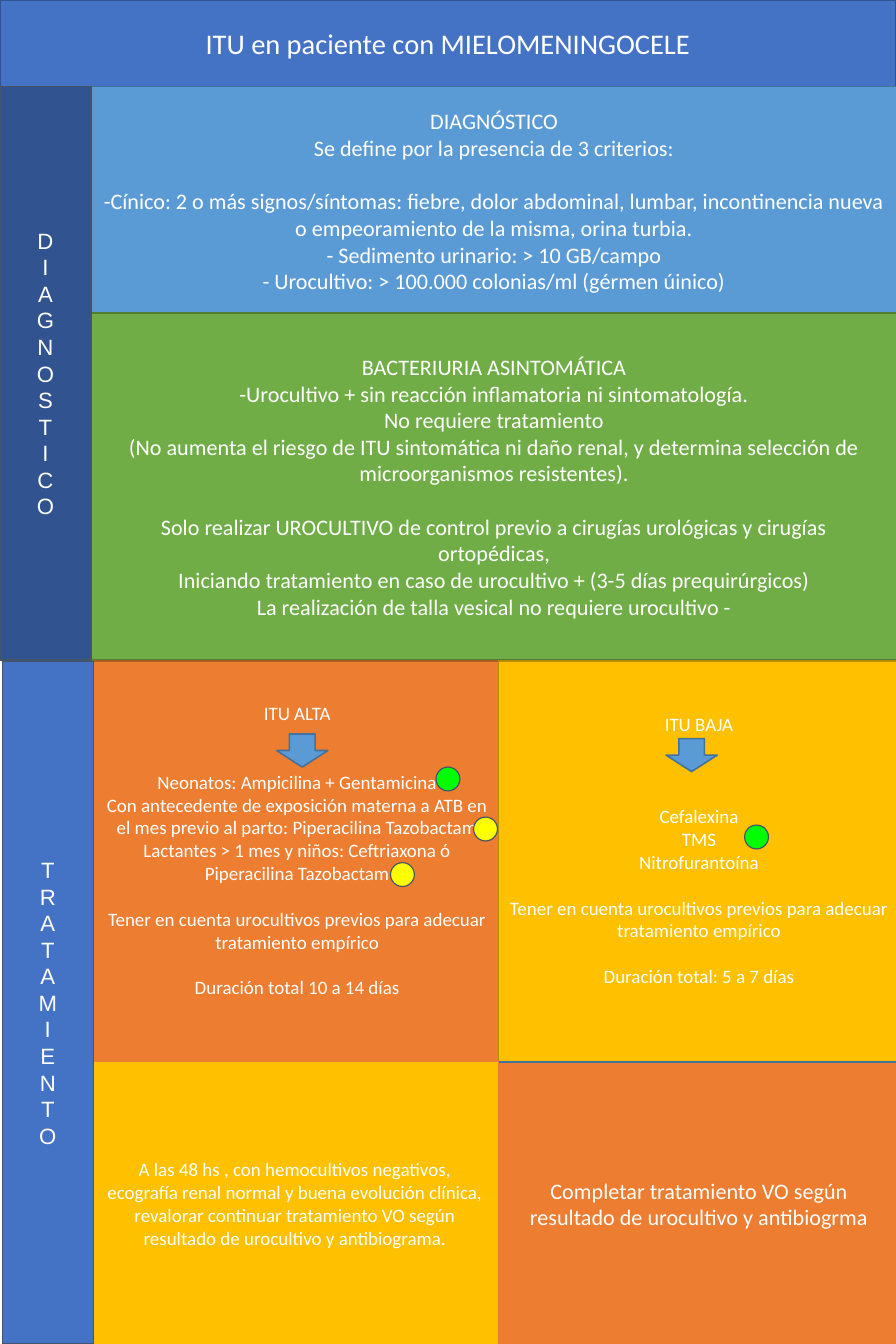
from pptx import Presentation
from pptx.dml.color import RGBColor
from pptx.enum.shapes import MSO_SHAPE as Preset
from pptx.enum.text import MSO_ANCHOR as Anchor, MSO_AUTO_SIZE as AutoSize, PP_ALIGN as Align
from pptx.oxml.ns import qn
from pptx.util import Inches, Pt
from lxml.etree import SubElement

LINE_HEIGHT = 1.22
SIDE = 0.8
MIDDLE = 4.38
DIAGNOSIS_TOP = 0.76
BACTERIURIA_TOP = 2.75
TREATMENT_TOP = 5.81
FOLLOW_UP_TOP = 9.33

BLUE, SKY, NAVY = "4472C4", "5B9BD5", "31538F"
GREEN, ORANGE, GOLD = "70AD47", "ED7D31", "FFC000"
SKY_EDGE, SLATE, WHITE = "42719B", "44546A", "FFFFFF"
LIME, YELLOW = "00FF00", "FFFF00"

DIAGNOSIS = [
    ["DIAGNÓSTICO", "Se define por la presencia de 3 criterios:"],
    ["-Cínico: 2 o más signos/síntomas: fiebre, dolor abdominal, lumbar, incontinencia nueva "
     "o empeoramiento de la misma, orina turbia.",
     "- Sedimento urinario: > 10 GB/campo",
     "- Urocultivo: > 100.000 colonias/ml (gérmen úinico)"],
]
BACTERIURIA = [
    ["BACTERIURIA ASINTOMÁTICA",
     "-Urocultivo + sin reacción inflamatoria ni sintomatología.",
     "No requiere tratamiento",
     "(No aumenta el riesgo de ITU sintomática ni daño renal, y determina selección de "
     "microorganismos resistentes)."],
    ["Solo realizar UROCULTIVO de control previo a cirugías urológicas y cirugías ortopédicas,",
     "Iniciando tratamiento en caso de urocultivo + (3-5 días prequirúrgicos)",
     "La realización de talla vesical no requiere urocultivo -"],
]
PRIOR_CULTURES = "Tener en cuenta urocultivos previos para adecuar tratamiento empírico"
UPPER_UTI = [
    ["ITU ALTA"],
    ["Neonatos: Ampicilina + Gentamicina",
     "Con antecedente de exposición materna a ATB en el mes previo al parto: "
     "Piperacilina Tazobactam",
     "Lactantes > 1 mes y niños: Ceftriaxona ó Piperacilina Tazobactam"],
    [PRIOR_CULTURES],
    ["Duración total 10 a 14 días"],
]
LOWER_UTI = [
    ["ITU BAJA"],
    ["Cefalexina", "TMS", "Nitrofurantoína"],
    [PRIOR_CULTURES],
    ["Duración total: 5 a 7 días"],
]
UPPER_FOLLOW_UP = [[
    "A las 48 hs , con hemocultivos negativos, ecografía renal normal y buena evolución clínica, "
    "revalorar continuar tratamiento VO según resultado de urocultivo y antibiograma."]]
LOWER_FOLLOW_UP = [["Completar tratamiento VO según resultado de urocultivo y antibiogrma"]]


def color(value):
    """Turn a hex string into a colour."""
    return RGBColor.from_string(value)


class Poster:
    """Hold the text style and the current slide."""

    def __init__(self, page, font="Calibri", ink=WHITE):
        """Keep the page and its default font and ink."""
        self.page, self.font, self.ink = page, font, ink

    def paint(self, box, fill, edge, weight=1):
        """Give a box its fill and outline."""
        box.fill.solid()
        box.fill.fore_color.rgb = color(fill)
        box.line.color.rgb = color(edge)
        box.line.width = Pt(weight)

    def shape(self, preset, place, fill, edge, weight=1):
        """Add a flat preset shape."""
        box = self.page.shapes.add_shape(preset, *map(Inches, place))
        box.shadow.inherit = False
        self.paint(box, fill, edge, weight)
        return box

    def placeholder(self, index, place, fill, edge):
        """Move and paint a template placeholder."""
        box = self.page.placeholders[index]
        box.left, box.top, box.width, box.height = map(Inches, place)
        self.paint(box, fill, edge)
        return box

    def add_text(self, box, groups, size=14, first_gap=1, bottom=0.05, font=None):
        """Add centred groups of paragraphs set apart by spacing."""
        frame = box.text_frame
        frame.word_wrap = True
        frame.auto_size = AutoSize.NONE
        frame.vertical_anchor = Anchor.MIDDLE
        frame.margin_left = frame.margin_right = Inches(0.1)
        frame.margin_top, frame.margin_bottom = Inches(0.05), Inches(bottom)
        para = frame.paragraphs[0]
        for number, group in enumerate(groups):
            for position, text in enumerate(group):
                if number or position:
                    para = frame.add_paragraph()
                gap = 0
                if number and position == 0:
                    gap = first_gap if number == 1 else 1
                para.alignment = Align.CENTER
                para.line_spacing = 1.0
                para.space_before = Pt(round(gap * size * LINE_HEIGHT, 1))
                para.space_after = Pt(0)
                properties = para._p.get_or_add_pPr()
                properties.set("marL", "0")
                properties.set("indent", "0")
                SubElement(properties, qn("a:buNone"))
                span = para.add_run()
                span.text = text
                span.font.size = Pt(size)
                span.font.name = font or self.font
                span.font.color.rgb = color(self.ink)

    def panel(self, place, fill, edge, groups, weight=1, **style):
        """Add a coloured rectangle with text."""
        self.add_text(self.shape(Preset.RECTANGLE, place, fill, edge, weight), groups, **style)

    def side_label(self, word, place, fill):
        """Add a side bar with one letter per line."""
        self.panel(place, fill, SLATE, [list(word)], weight=0.75, font="Arial")

    def arrow(self, left, top):
        """Add a small down arrow."""
        self.shape(Preset.DOWN_ARROW, (left, top, 0.45, 0.29), SKY, SKY_EDGE)

    def light(self, left, top, fill):
        """Add a round signal light."""
        self.shape(Preset.OVAL, (left, top, 0.21, 0.21), fill, SLATE, 0.75)


def main():
    """Build and save the poster."""
    deck = Presentation()
    deck.slide_width, deck.slide_height = Inches(7.87), Inches(11.81)
    poster = Poster(deck.slides.add_slide(deck.slide_layouts.get_by_name("Two Content")))

    title = poster.placeholder(0, (0, 0, 7.87, DIAGNOSIS_TOP), BLUE, NAVY)
    poster.add_text(title, [["ITU en paciente con MIELOMENINGOCELE"]], size=18)
    diagnosis = poster.placeholder(1, (SIDE, DIAGNOSIS_TOP, 7.08, 2.79), SKY, SKY_EDGE)
    poster.add_text(diagnosis, DIAGNOSIS, bottom=0.83)
    bacteriuria = poster.placeholder(2, (SIDE, BACTERIURIA_TOP, 7.08, 3.05), GREEN, "517E33")
    poster.add_text(bacteriuria, BACTERIURIA)

    poster.panel((0.82, TREATMENT_TOP, 3.58, 3.52), ORANGE, "AC5B23", UPPER_UTI,
                 size=12, first_gap=2, bottom=0.25)
    poster.panel((MIDDLE, TREATMENT_TOP, 3.52, 3.52), GOLD, "BA8C00", LOWER_UTI,
                 size=12, first_gap=3, bottom=0.25)
    poster.panel((MIDDLE, FOLLOW_UP_TOP, 3.52, 2.49), ORANGE, SKY_EDGE, LOWER_FOLLOW_UP)
    poster.panel((SIDE, FOLLOW_UP_TOP, 3.58, 2.49), GOLD, ORANGE, UPPER_FOLLOW_UP,
                 weight=0.75, size=12)

    for left, top in [(2.43, 6.45), (5.85, 6.49)]:
        poster.arrow(left, top)
    for left, top, fill in [(6.54, 7.25, LIME), (3.83, 6.74, LIME),
                            (4.16, 7.18, YELLOW), (3.43, 7.58, YELLOW)]:
        poster.light(left, top, fill)

    poster.side_label("DIAGNOSTICO", (0, DIAGNOSIS_TOP, SIDE, 5.04), NAVY)
    poster.side_label("TRATAMIENTO", (0.02, TREATMENT_TOP, SIDE, 6), BLUE)
    deck.save("out.pptx")


if __name__ == "__main__":
    main()
